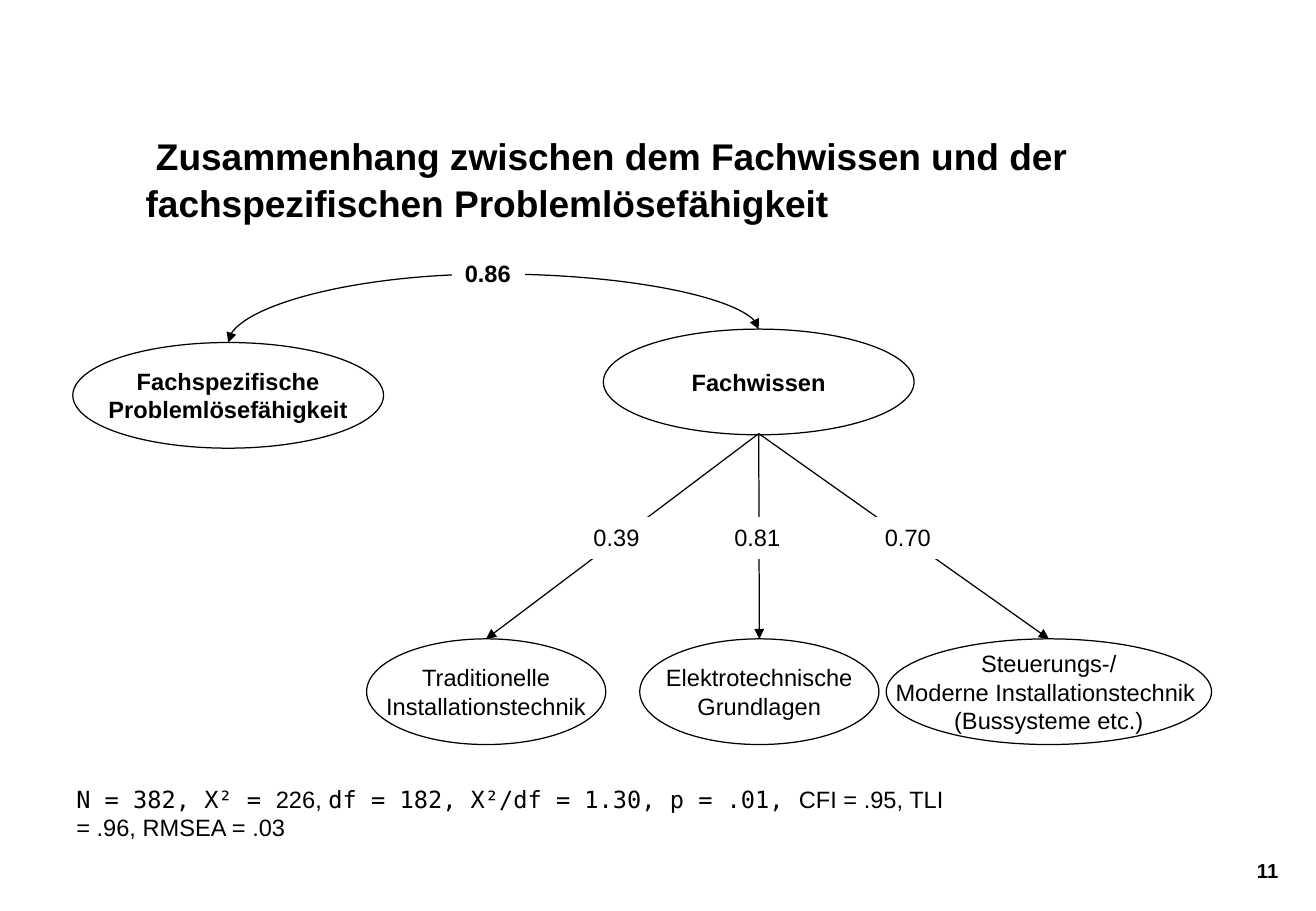
import lxml.etree
import pptx
import pptx.dml.color
import pptx.enum.shapes
import pptx.enum.text
import pptx.oxml.ns
import pptx.util
from pptx.util import Inches

BLACK = "000000"
WHITE = "FFFFFF"
SANS = "Arial"
MONO = "DejaVu Sans Mono"
ALIGN = pptx.enum.text.PP_ALIGN
ANCHOR = pptx.enum.text.MSO_ANCHOR
SHAPE = pptx.enum.shapes.MSO_SHAPE
CONNECTOR = pptx.enum.shapes.MSO_CONNECTOR

FACTOR_TOP = 5.26
ELLIPSE_HEIGHT = 0.87
KNOWLEDGE_BOTTOM = (6.25, 3.57)


def colour(value):
    """Return the colour for a hex string."""
    return pptx.dml.color.RGBColor.from_string(value)


def style_font(font, size, bold=False, name=SANS):
    """Format a font in black."""
    font.name = name
    font.size = pptx.util.Pt(size)
    font.bold = bold
    font.color.rgb = colour(BLACK)


def write_lines(frame, lines, size, bold=False, align=ALIGN.LEFT, anchor=ANCHOR.TOP, wrap=False):
    """Fill a text frame with one paragraph per line."""
    frame.word_wrap = wrap
    frame.vertical_anchor = anchor
    frame.text = "\n".join(lines)
    for paragraph in frame.paragraphs:
        paragraph.alignment = align
        style_font(paragraph.font, size, bold)


def place(shape, left, top, width, height):
    """Set position and size of a shape in inches."""
    shape.left, shape.top = Inches(left), Inches(top)
    shape.width, shape.height = Inches(width), Inches(height)


def add_title(slide, lines):
    """Fill and format the title placeholder."""
    title = slide.shapes.title
    place(title, 1.1, 1.03, 7.98, 0.84)
    title.text_frame.auto_size = pptx.enum.text.MSO_AUTO_SIZE.NONE
    write_lines(title.text_frame, lines, 22, bold=True, wrap=True)
    for paragraph in title.text_frame.paragraphs:
        paragraph.line_spacing = 1.05


def add_ellipse(slide, left, top, width, lines, bold=False):
    """Add an outlined ellipse for a latent variable."""
    ellipse = slide.shapes.add_shape(
        SHAPE.OVAL, Inches(left), Inches(top), Inches(width), Inches(ELLIPSE_HEIGHT))
    ellipse.shadow.inherit = False
    ellipse.fill.background()
    ellipse.line.color.rgb = colour(BLACK)
    ellipse.line.width = pptx.util.Pt(0.75)
    write_lines(ellipse.text_frame, lines, 14, bold, ALIGN.CENTER, ANCHOR.MIDDLE)
    return ellipse


def add_coefficient(slide, left, top, value, bold=False):
    """Add a coefficient on a white patch that interrupts its arrow."""
    patch = slide.shapes.add_shape(
        SHAPE.RECTANGLE, Inches(left), Inches(top), Inches(0.59), Inches(0.34))
    patch.shadow.inherit = False
    patch.fill.solid()
    patch.fill.fore_color.rgb = colour(WHITE)
    patch.line.color.rgb = colour(WHITE)
    patch.line.width = pptx.util.Pt(0.75)
    write_lines(patch.text_frame, [value], 14, bold)


def add_arrow(slide, kind, start, end, ends=("tailEnd",)):
    """Add a thin black connector with triangle heads."""
    arrow = slide.shapes.add_connector(kind, *map(Inches, (*start, *end)))
    arrow.line.color.rgb = colour(BLACK)
    arrow.line.width = pptx.util.Pt(0.75)
    properties = arrow._element.spPr
    outline = properties.find(pptx.oxml.ns.qn("a:ln"))
    for end_tag in ends:
        lxml.etree.SubElement(outline, pptx.oxml.ns.qn(f"a:{end_tag}"), type="triangle")
    lxml.etree.SubElement(properties, pptx.oxml.ns.qn("a:effectLst"))
    return arrow


def add_correlation(slide, first, second):
    """Add the double-headed arc between the tops of two ellipses."""
    arc = add_arrow(slide, CONNECTOR.CURVE, (1.88, 2.82), (6.25, 2.71), ("headEnd", "tailEnd"))
    arc.begin_connect(first, 0)
    arc.end_connect(second, 0)
    place(arc, 4.01, 0.58, 0.11, 4.37)
    properties = arc._element.spPr
    transform = properties.find(pptx.oxml.ns.qn("a:xfrm"))
    transform.attrib.pop("flipV", None)
    transform.set("rot", "16200000")
    geometry = properties.find(pptx.oxml.ns.qn("a:prstGeom"))
    adjustments = geometry.find(pptx.oxml.ns.qn("a:avLst"))
    lxml.etree.SubElement(adjustments, pptx.oxml.ns.qn("a:gd"), name="adj1", fmla="val 514300")


def add_text_box(slide, left, top, width, height):
    """Add an empty text box and return its frame."""
    box = slide.shapes.add_textbox(Inches(left), Inches(top), Inches(width), Inches(height))
    box.text_frame.word_wrap = True
    return box.text_frame


def add_fit_statistics(slide, parts):
    """Add the model fit line from pairs of text and font name."""
    paragraph = add_text_box(slide, 0.53, 6.41, 7.42, 0.33).paragraphs[0]
    for text, name in parts:
        run = paragraph.add_run()
        run.text = text
        style_font(run.font, 14, name=name)


def add_page_number(slide, number):
    """Add the page number at the lower right."""
    frame = add_text_box(slide, 9.92, 7.08, 0.61, 0.19)
    frame.margin_left = frame.margin_right = frame.margin_top = frame.margin_bottom = 0
    write_lines(frame, [number], 12, bold=True, align=ALIGN.RIGHT, wrap=True)
    frame.paragraphs[0].line_spacing = 0.93


def main():
    """Build the slide and save it."""
    presentation = pptx.Presentation()
    presentation.slide_width, presentation.slide_height = Inches(10.84), Inches(7.5)
    slide = presentation.slides.add_slide(presentation.slide_layouts[5])

    add_title(slide, [" Zusammenhang zwischen dem Fachwissen und der",
                      "fachspezifischen Problemlösefähigkeit"])

    problem_solving = add_ellipse(
        slide, 0.6, 2.82, 2.56, ["Fachspezifische", "Problemlösefähigkeit"], bold=True)
    knowledge = add_ellipse(slide, 4.97, 2.71, 2.56, ["Fachwissen"], bold=True)
    add_correlation(slide, problem_solving, knowledge)
    add_coefficient(slide, 3.73, 2.08, "0.86", bold=True)

    factors = [
        (3.02, 1.97, ["Traditionelle", "Installationstechnik"], 4.79, "0.39"),
        (5.27, 1.97, ["Elektrotechnische", "Grundlagen"], 5.95, "0.81"),
        (7.3, 2.68, ["Steuerungs-/", "Moderne Installationstechnik ", "(Bussysteme etc.)"],
         7.19, "0.70"),
    ]
    for left, width, lines, coefficient_left, value in factors:
        add_ellipse(slide, left, FACTOR_TOP, width, lines)
        add_arrow(slide, CONNECTOR.STRAIGHT, KNOWLEDGE_BOTTOM, (left + width / 2, FACTOR_TOP))
        add_coefficient(slide, coefficient_left, 4.26, value)

    add_fit_statistics(slide, [
        ("N = 382, Χ² = ", MONO),
        ("226, ", SANS),
        ("df = 182, Χ²/df = 1.30, p = .01, ", MONO),
        ("CFI = .95, TLI = .96, RMSEA = .03", SANS),
    ])
    add_page_number(slide, "11")
    presentation.save("out.pptx")


if __name__ == "__main__":
    main()
